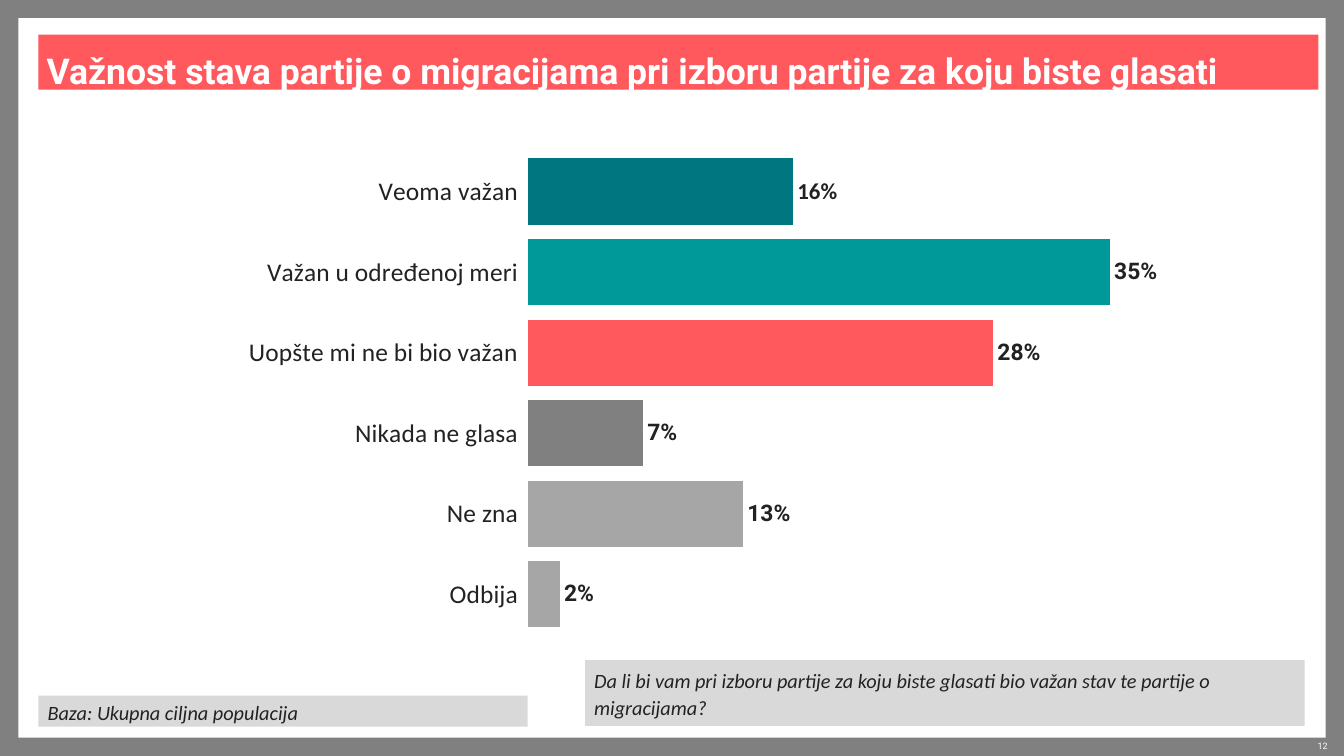
"""Build a survey slide with a bar chart on the importance of migration policy."""
import dataclasses

import lxml.etree
import pptx
import pptx.chart.data
import pptx.dml.color
import pptx.enum.chart
import pptx.enum.shapes
import pptx.enum.text
import pptx.oxml
import pptx.util

Inches = pptx.util.Inches
Pt = pptx.util.Pt
Anchor = pptx.enum.text.MSO_ANCHOR
Align = pptx.enum.text.PP_ALIGN

TITLE = "Važnost stava partije o migracijama pri izboru partije za koju biste glasati"
BASE = "Baza: Ukupna ciljna populacija"
QUESTION = ("Da li bi vam pri izboru partije za koju biste glasati "
            "bio važan stav te partije o migracijama?")
PAGE_NUMBER = "12"
ANSWERS = [
    ("Veoma važan", 16, "007681"),
    ("Važan u određenoj meri", 35, "009999"),
    ("Uopšte mi ne bi bio važan", 28, "FF585D"),
    ("Nikada ne glasa", 7, "808080"),
    ("Ne zna", 13, "A6A6A6"),
    ("Odbija", 2, "A6A6A6"),
]
AXIS_MAXIMUM = 40
PERCENT = '#"%"'
PLOT_AREA = {"x": 0.397, "y": 0.001, "w": 0.594, "h": 0.999}

SLIDE_WIDTH, SLIDE_HEIGHT, BORDER = 14.7, 8.27, 0.2
PANEL_BOX = (BORDER, BORDER, SLIDE_WIDTH - 2 * BORDER, SLIDE_HEIGHT - 2 * BORDER)
TITLE_BOX = (0.42, 0.38, 14, 0.6)
BASE_BOX = (0.42, 7.61, 5.35, 0.34)
QUESTION_BOX = (6.4, 7.22, 7.87, 0.72)
CHART_BOX = (0.89, 1.65, 12.28, 5.29)
NUMBER_BOX = (13.73, 8.1, 0.79, 0.13)


@dataclasses.dataclass(frozen=True)
class Theme:
    """Colours, fonts and type sizes of the slide."""
    border: str = "808080"
    white: str = "FFFFFF"
    accent: str = "FF585D"
    note: str = "D9D9D9"
    ink: str = "222223"
    heading_font: str = "Roboto"
    text_font: str = "Calibri"
    title_size: int = 28
    category_size: int = 20
    label_size: int = 18
    note_size: int = 16
    number_size: int = 7


THEME = Theme()


def paint(fill, color):
    """Give a fill one solid colour."""
    fill.solid()
    fill.fore_color.rgb = pptx.dml.color.RGBColor.from_string(color)


def style_font(font, name, size, color, bold=False, italic=False):
    """Set every property of a font."""
    font.name, font.size, font.bold, font.italic = name, Pt(size), bold, italic
    font.color.rgb = pptx.dml.color.RGBColor.from_string(color)


def place(shape, box):
    """Move and size a shape to a box in inches."""
    shape.left, shape.top, shape.width, shape.height = map(Inches, box)


def add_rectangle(slide, box, color):
    """Add a plain rectangle without line or shadow."""
    shape = slide.shapes.add_shape(
        pptx.enum.shapes.MSO_SHAPE.RECTANGLE, *map(Inches, box))
    shape.shadow.inherit = False
    shape.line.fill.background()
    paint(shape.fill, color)
    return shape


def write(shape, text, insets, align=Align.LEFT, wrap=True, **font):
    """Write one paragraph in a shape and return it."""
    frame = shape.text_frame
    frame.word_wrap = wrap
    frame.auto_size = pptx.enum.text.MSO_AUTO_SIZE.NONE
    frame.vertical_anchor = Anchor.MIDDLE
    (frame.margin_left, frame.margin_top,
     frame.margin_right, frame.margin_bottom) = map(Inches, insets)
    paragraph = frame.paragraphs[0]
    paragraph.alignment = align
    run = paragraph.add_run()
    run.text = text
    style_font(run.font, **font)
    return paragraph


def write_note(shape, text):
    """Write an italic note without a bullet."""
    paragraph = write(shape, text, (0.1, 0, 0.1, 0), name=THEME.text_font,
                      size=THEME.note_size, color=THEME.ink, italic=True)
    paragraph.line_spacing = 1.1
    paragraph.space_before = paragraph.space_after = Pt(6)
    properties = paragraph._p.get_or_add_pPr()
    properties.set("marL", "0")
    properties.set("indent", "0")
    lxml.etree.SubElement(properties, pptx.oxml.ns.qn("a:buNone"))


def fix_plot_area(chart):
    """Pin the inner plot area to fractions of the chart."""
    qn = pptx.oxml.ns.qn
    plot_area = chart._chartSpace.chart.plotArea
    for old_layout in plot_area.findall(qn("c:layout")):
        plot_area.remove(old_layout)
    layout = lxml.etree.Element(qn("c:layout"))
    manual = lxml.etree.SubElement(layout, qn("c:manualLayout"))
    settings = [("layoutTarget", "inner"), ("xMode", "edge"), ("yMode", "edge")]
    for tag, value in settings + list(PLOT_AREA.items()):
        lxml.etree.SubElement(manual, qn(f"c:{tag}")).set("val", str(value))
    plot_area.insert(0, layout)


def add_answer_chart(slide):
    """Add the bar chart of answers."""
    chart_enum = pptx.enum.chart
    data = pptx.chart.data.CategoryChartData(number_format=PERCENT)
    categories, values, colors = zip(*ANSWERS)
    data.categories = categories
    data.add_series("Series 1", values)
    chart = slide.shapes.add_chart(chart_enum.XL_CHART_TYPE.BAR_CLUSTERED,
                                   *map(Inches, CHART_BOX), data).chart
    chart.has_legend = chart.has_title = False
    style_font(chart.font, THEME.heading_font, THEME.label_size, THEME.ink)
    fix_plot_area(chart)

    category_axis, value_axis = chart.category_axis, chart.value_axis
    category_axis.reverse_order = True
    category_axis.major_tick_mark = chart_enum.XL_TICK_MARK.OUTSIDE
    style_font(category_axis.tick_labels.font, THEME.text_font,
               THEME.category_size, THEME.ink)
    value_axis.minimum_scale, value_axis.maximum_scale = 0, AXIS_MAXIMUM
    value_axis.has_major_gridlines = False
    value_axis.major_tick_mark = chart_enum.XL_TICK_MARK.NONE
    value_axis.tick_label_position = chart_enum.XL_TICK_LABEL_POSITION.NONE
    for axis in (category_axis, value_axis):
        axis.format.line.fill.background()

    plot = chart.plots[0]
    plot.gap_width = 20
    plot.vary_by_categories = False
    series = plot.series[0]
    labels = series.data_labels
    labels.show_value = True
    labels.number_format, labels.number_format_is_linked = PERCENT, False
    labels.position = chart_enum.XL_LABEL_POSITION.OUTSIDE_END
    style_font(labels.font, THEME.heading_font, THEME.label_size, THEME.ink, bold=True)
    for index, color in enumerate(colors):
        bar = series.points[index].format
        paint(bar.fill, color)
        paint(bar.line.fill, THEME.white)
        bar.line.width = Pt(0.75)
    first_label = series.points[0].data_label
    style_font(first_label.font, THEME.text_font, THEME.label_size, THEME.ink, bold=True)
    first_label.position = chart_enum.XL_LABEL_POSITION.OUTSIDE_END


def main():
    """Build and save the presentation."""
    presentation = pptx.Presentation()
    presentation.slide_width = Inches(SLIDE_WIDTH)
    presentation.slide_height = Inches(SLIDE_HEIGHT)
    slide = presentation.slides.add_slide(presentation.slide_layouts[1])
    paint(slide.background.fill, THEME.border)
    title, base = slide.shapes.title, slide.placeholders[1]
    panel = add_rectangle(slide, PANEL_BOX, THEME.white)
    title.element.addprevious(panel.element)

    place(title, TITLE_BOX)
    paint(title.fill, THEME.accent)
    heading = write(title, TITLE, (0.09, 0.08, 0.09, 0), wrap=False, bold=True,
                    name=THEME.heading_font, size=THEME.title_size, color=THEME.white)
    heading.line_spacing = Pt(41)

    place(base, BASE_BOX)
    paint(base.fill, THEME.note)
    write_note(base, BASE)
    write_note(add_rectangle(slide, QUESTION_BOX, THEME.note), QUESTION)
    add_answer_chart(slide)
    write(slide.shapes.add_textbox(*map(Inches, NUMBER_BOX)), PAGE_NUMBER, (0, 0, 0, 0),
          align=Align.RIGHT, name=THEME.heading_font, size=THEME.number_size,
          color=THEME.white)
    presentation.save("out.pptx")


if __name__ == "__main__":
    main()
